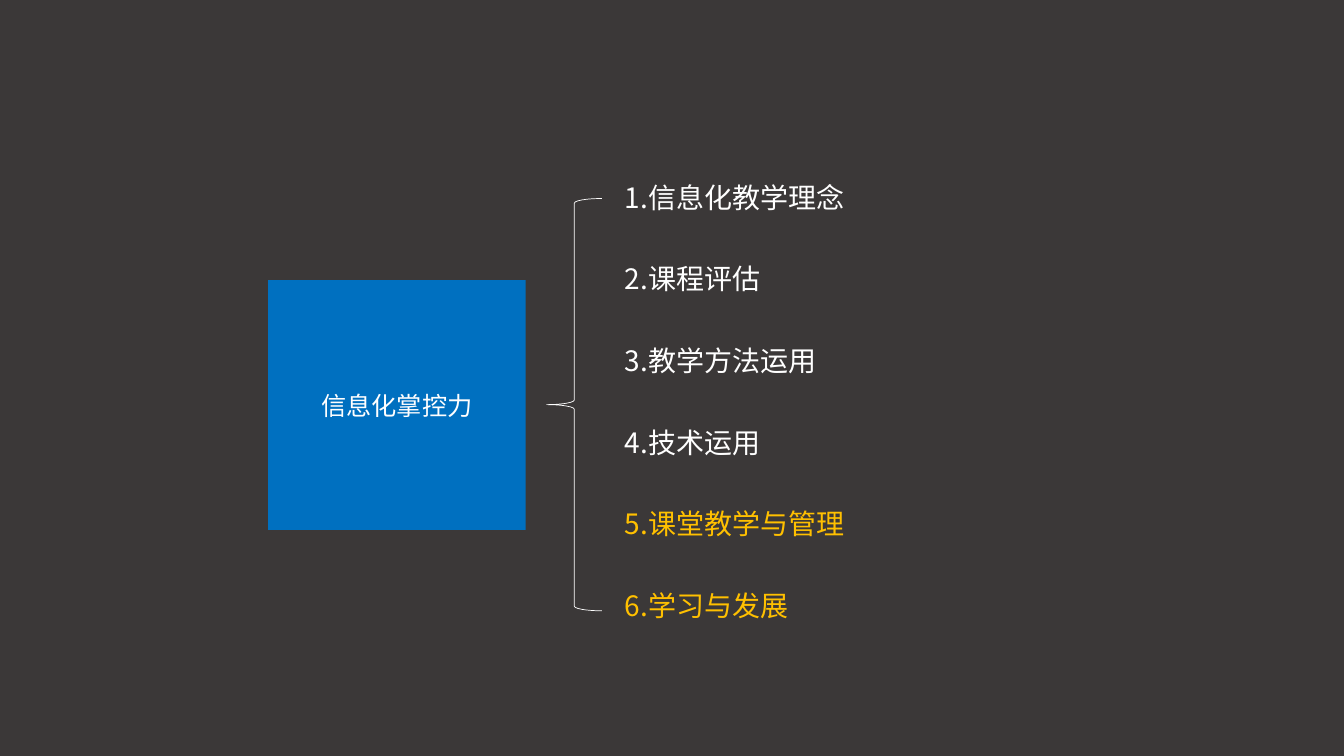
"""Build a slide that splits one teaching skill into six parts."""
from lxml import etree
from pptx import Presentation
from pptx.dml.color import RGBColor
from pptx.enum.shapes import MSO_SHAPE
from pptx.enum.text import MSO_ANCHOR, PP_ALIGN
from pptx.oxml.ns import qn
from pptx.util import Pt

RECT, BRACE = MSO_SHAPE.RECTANGLE, MSO_SHAPE.LEFT_BRACE
MIDDLE = MSO_ANCHOR.MIDDLE
LEFT, CENTER = PP_ALIGN.LEFT, PP_ALIGN.CENTER

DARK = RGBColor(0x3B, 0x38, 0x38)
BLUE = RGBColor(0x00, 0x70, 0xC0)
WHITE = RGBColor(0xFF, 0xFF, 0xFF)
GOLD = RGBColor(0xFF, 0xC0, 0x00)
FONT = "Noto Sans CJK SC"

SKILL = "信息化掌控力"
PARTS = [
    ("信息化教学理念", WHITE),
    ("课程评估", WHITE),
    ("教学方法运用", WHITE),
    ("技术运用", WHITE),
    ("课堂教学与管理", GOLD),
    ("学习与发展", GOLD),
]

SLIDE = (960, 540)
SKILL_BOX = (191.5, 200, 184, 178.5)
BRACE_BOX = (390.5, 141.8, 39.5, 294.5)
PART_LEFT, PART_TOP, PART_WIDE, PART_HIGH = 439.2, 111.6, 201.6, 61.2
PART_STEP = 58.3

SKILL_STYLE = {"size": Pt(18), "name": FONT}
PART_STYLE = {"size": Pt(20), "name": FONT}


def write(shape, text, style, color, align, spacing):
    """Put one line of styled text in a shape."""
    frame = shape.text_frame
    frame.word_wrap = True
    frame.vertical_anchor = MIDDLE
    line = frame.paragraphs[0]
    line.alignment = align
    line.line_spacing = spacing
    run = line.add_run()
    run.text = text
    for key, value in style.items():
        setattr(run.font, key, value)
    run.font.color.rgb = color
    etree.SubElement(run.font._element, qn("a:ea"), typeface=FONT)


def main():
    """Draw the skill, the brace and the list of parts."""
    deck = Presentation()
    deck.slide_width, deck.slide_height = map(Pt, SLIDE)
    slide = deck.slides.add_slide(deck.slide_layouts[6])
    back = slide.background.fill
    back.solid()
    back.fore_color.rgb = DARK

    skill = slide.shapes.add_shape(RECT, *map(Pt, SKILL_BOX))
    skill.shadow.inherit = False
    skill.fill.solid()
    skill.fill.fore_color.rgb = BLUE
    skill.line.fill.background()
    write(skill, SKILL, SKILL_STYLE, WHITE, CENTER, 1.0)

    brace = slide.shapes.add_shape(BRACE, *map(Pt, BRACE_BOX))
    brace.shadow.inherit = False
    brace.fill.background()
    brace.line.color.rgb = WHITE
    brace.line.width = Pt(0.5)

    for row, (part, color) in enumerate(PARTS):
        area = (PART_LEFT, PART_TOP + row * PART_STEP, PART_WIDE, PART_HIGH)
        box = slide.shapes.add_textbox(*map(Pt, area))
        write(box, f"{row + 1}.{part}", PART_STYLE, color, LEFT, 0.9)

    deck.save("out.pptx")


if __name__ == "__main__":
    main()
